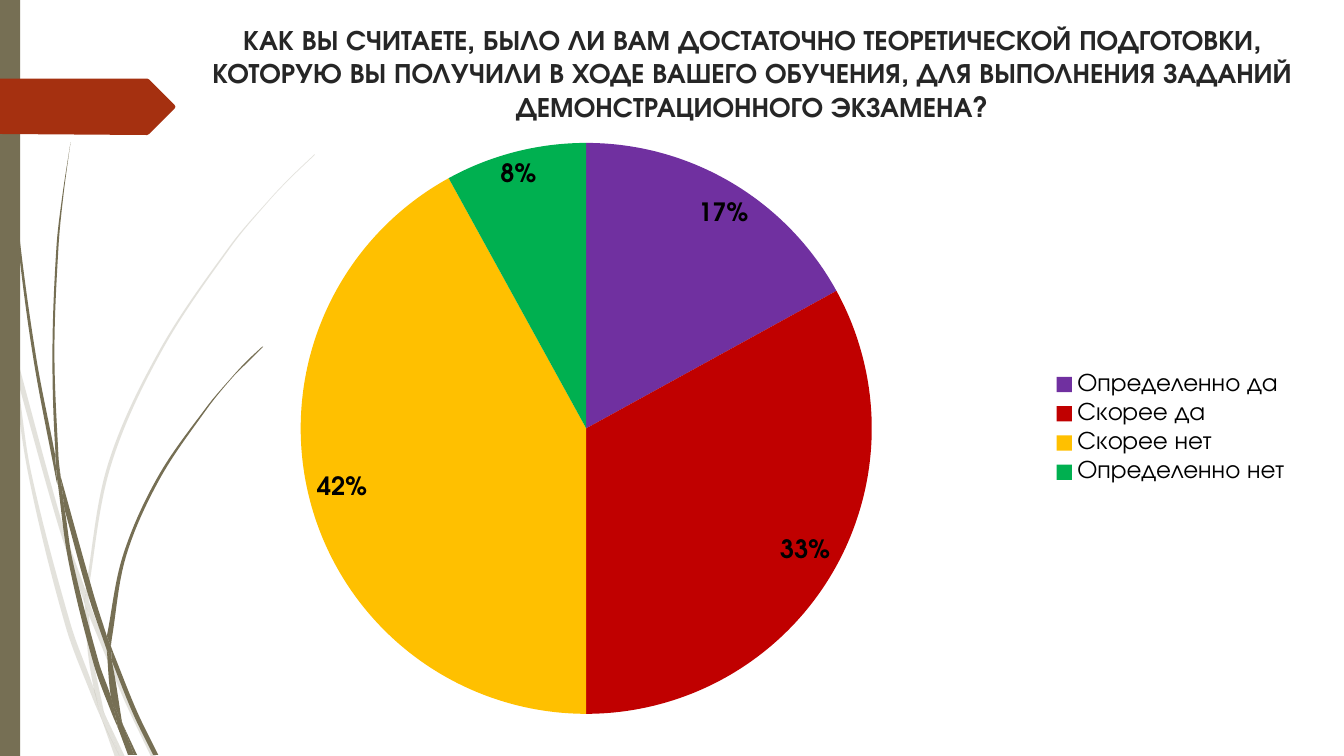
from math import dist

from lxml import etree
from pptx import Presentation
from pptx.chart.data import CategoryChartData
from pptx.dml.color import RGBColor
from pptx.enum.chart import XL_CHART_TYPE, XL_LABEL_POSITION, XL_LEGEND_POSITION
from pptx.enum.shapes import MSO_SHAPE
from pptx.enum.text import MSO_ANCHOR, MSO_AUTO_SIZE, PP_ALIGN
from pptx.oxml.ns import qn
from pptx.util import Inches, Pt

PIE = XL_CHART_TYPE.PIE
BEST_FIT = XL_LABEL_POSITION.BEST_FIT
LEGEND_RIGHT = XL_LEGEND_POSITION.RIGHT
RECTANGLE = MSO_SHAPE.RECTANGLE
TOP = MSO_ANCHOR.TOP
NO_AUTOFIT = MSO_AUTO_SIZE.NONE
CENTER = PP_ALIGN.CENTER

FONT = "TeX Gyre Adventor"
OLIVE, RUST, INK, BLACK = "766F54", "A53010", "262626", "000000"
TITLE = ("КАК ВЫ СЧИТАЕТЕ, БЫЛО ЛИ ВАМ ДОСТАТОЧНО ТЕОРЕТИЧЕСКОЙ ПОДГОТОВКИ, "
         "КОТОРУЮ ВЫ ПОЛУЧИЛИ В ХОДЕ ВАШЕГО ОБУЧЕНИЯ, ДЛЯ ВЫПОЛНЕНИЯ ЗАДАНИЙ "
         "ДЕМОНСТРАЦИОННОГО ЭКЗАМЕНА?")
ANSWERS = [("Определенно да", 17, "7030A0"), ("Скорее да", 33, "C00000"),
           ("Скорее нет", 42, "FFC000"), ("Определенно нет", 8, "00B050")]

# Each blade of grass is a pair of edges: out along the first, back along the second.
PALE_BLADES = [
    ([(0.11, 3.5), (0.09, 3.22), (0, 2.82)], [(0, 2.99), (0.1, 3.44), (0.11, 3.5)]),
    ([(0.17, 3.76), (0.58, 5.22), (0.84, 5.99)],
     [(0.85, 5.86), (0.62, 5.2), (0.14, 3.45)]),
    ([(0.88, 6.1), (1.23, 6.94), (1.5, 7.51)],
     [(1.55, 7.51), (1.27, 6.92), (0.92, 6.07), (0.88, 5.96)]),
    ([(1.05, 7.11), (1.19, 7.51)], [(1.24, 7.51), (1.05, 7.11)]),
    ([(0.11, 3.5), (0.28, 4.7), (0.65, 6.21), (0.92, 6.93), (1.01, 7.14)],
     [(0.99, 7.07), (0.93, 6.83), (0.7, 6.19), (0.31, 4.69), (0.17, 3.76), (0.11, 3.5)]),
    ([(0.84, 5.99), (0.87, 6.46), (0.93, 6.83), (0.96, 6.92), (1.05, 7.11)],
     [(1.03, 7.06), (0.91, 6.46), (0.88, 6.1), (0.84, 5.99)]),
    ([(0.88, 5.96), (0.88, 5.84), (1.1, 4.62), (1.6, 3.49), (2.29, 2.45),
      (2.68, 1.98), (2.9, 1.75), (3.12, 1.54)],
     [(3.12, 1.53), (2.89, 1.75), (2.68, 1.97), (2.28, 2.44), (1.58, 3.48),
      (1.07, 4.61), (0.85, 5.84), (0.85, 5.86)]),
    ([(1.01, 7.14), (1.14, 7.51)], [(1.19, 7.51), (1.01, 7.14)]),
    ([(0.88, 6.1), (0.88, 5.96)], [(0.85, 5.86), (0.84, 5.99), (0.88, 6.08)]),
    ([(0.93, 6.83), (0.99, 7.07), (1.01, 7.14), (1.19, 7.51)],
     [(1.05, 7.11), (0.96, 6.92), (0.93, 6.83)]),
]
DARK_BLADES = [
    ([(0.03, 0), (0.03, 0.48), (0.07, 1.1), (0.17, 2.33), (0.33, 3.55),
      (0.56, 4.77), (0.57, 4.81)],
     [(0.55, 4.57), (0.55, 4.53), (0.36, 3.55), (0.19, 2.32), (0.08, 1.09),
      (0.05, 0.48), (0.03, 0)]),
    ([(0.64, 5.05), (0.88, 5.92), (1.06, 6.45)],
     [(1.06, 6.31), (0.93, 5.9), (0.6, 4.72)]),
    ([(1.11, 6.56), (1.32, 7.08), (1.52, 7.49)],
     [(1.57, 7.49), (1.36, 7.06), (1.13, 6.49), (1.1, 6.41)]),
    ([(0.57, 4.77), (0.68, 5.57), (0.93, 6.59), (1.11, 7.08), (1.17, 7.22)],
     [(1.16, 7.17), (1.1, 6.91), (0.98, 6.57), (0.72, 5.56), (0.64, 5.05), (0.57, 4.77)]),
    ([(0.6, 4.72), (0.58, 4.53), (0.54, 3.49), (0.58, 2.45), (0.63, 1.93), (0.7, 1.41)],
     [(0.7, 1.41), (0.62, 1.93), (0.56, 2.45), (0.52, 3.49), (0.55, 4.49), (0.6, 4.72)]),
    ([(1.22, 7.19), (1.33, 7.49)], [(1.36, 7.49), (1.22, 7.19)]),
    ([(0.55, 4.53), (0.57, 4.77), (0.64, 5.05)], [(0.6, 4.72), (0.55, 4.49)]),
    ([(1.1, 6.41), (1.11, 6.33), (1.25, 5.52), (1.58, 4.76), (2.05, 4.06),
      (2.31, 3.74), (2.46, 3.59), (2.61, 3.44)],
     [(2.6, 3.44), (2.45, 3.58), (2.31, 3.73), (2.04, 4.05), (1.56, 4.74),
      (1.22, 5.51), (1.06, 6.31)]),
    ([(1.17, 7.22), (1.27, 7.49)], [(1.31, 7.49), (1.17, 7.22)]),
    ([(1.06, 6.45), (1.1, 6.91), (1.16, 7.06), (1.22, 7.19)],
     [(1.21, 7.16), (1.11, 6.56), (1.06, 6.45)]),
    ([(1.06, 6.45), (1.11, 6.56)], [(1.1, 6.41), (1.06, 6.31)]),
    ([(1.1, 6.91), (1.16, 7.17), (1.17, 7.22), (1.3, 7.49)],
     [(1.33, 7.49), (1.22, 7.19), (1.16, 7.06), (1.1, 6.91)]),
]
FLAG = [(-0.01, 0.78), (1.46, 0.78), (1.48, 0.79), (1.73, 1.04), (1.74, 1.06),
        (1.73, 1.08), (1.48, 1.33), (1.46, 1.34), (-0.01, 1.33)]


def color(value):
    return RGBColor.from_string(value)


def bend(lines):
    """Turn the line segments that follow the first point into one smooth curve."""
    points = [(int(line[0].get("x")), int(line[0].get("y"))) for line in lines]
    padded = [points[0], *points, points[-1]]
    for line, a, b, c, d in zip(lines[1:], padded, padded[1:], padded[2:], padded[3:]):
        reach = dist(b, c) / 3
        leave, arrive = reach / dist(a, c), reach / dist(b, d)
        first = [q + (r - p) * leave for p, q, r in zip(a, b, c)]
        second = [r - (s - q) * arrive for q, r, s in zip(b, c, d)]
        line.tag = qn("a:cubicBezTo")
        for index, (x, y) in enumerate((first, second)):
            line.insert(index, etree.Element(qn("a:pt"), x=str(round(x)), y=str(round(y))))


class SurveySlide:
    def __init__(self, presentation, font):
        self.slide = presentation.slides.add_slide(presentation.slide_layouts[5])
        self.shapes = self.slide.shapes
        self.font = font

    def paint(self, shape, fill, opacity=100):
        shape.shadow.inherit = False
        shape.fill.solid()
        shape.fill.fore_color.rgb = color(fill)
        shape.line.fill.background()
        if opacity < 100:
            tint = shape.element.spPr.find(".//" + qn("a:srgbClr"))
            etree.SubElement(tint, qn("a:alpha"), val=str(opacity * 1000))

    def outline(self, shapes, points, fill, opacity=100):
        corners = [(Inches(x), Inches(y)) for x, y in points]
        builder = shapes.build_freeform(*corners[0])
        builder.add_line_segments(corners[1:])
        shape = builder.convert_to_shape()
        self.paint(shape, fill, opacity)
        return shape

    def grass(self, blades, fill, opacity=100):
        group = self.shapes.add_group_shape()
        for out, back in blades:
            blade = self.outline(group.shapes, out + back, fill, opacity)
            lines = list(blade.element.spPr.find(".//" + qn("a:path")))[:len(out + back)]
            bend(lines[:len(out)])
            bend(lines[len(out):])

    def bar(self, left, top, width, height, fill):
        box = [Inches(n) for n in (left, top, width, height)]
        self.paint(self.shapes.add_shape(RECTANGLE, *box), fill)

    def title(self, text, left, top, width, height):
        title = self.shapes.title
        title.left, title.top = Inches(left), Inches(top)
        title.width, title.height = Inches(width), Inches(height)
        frame = title.text_frame
        frame.text = text
        frame.word_wrap = True
        frame.auto_size = NO_AUTOFIT
        frame.vertical_anchor = TOP
        paragraph = frame.paragraphs[0]
        paragraph.alignment = CENTER
        self.style(paragraph.font, 20, INK, True)

    def style(self, font, size, fill, bold=False):
        font.name, font.size, font.bold = self.font, Pt(size), bold
        font.color.rgb = color(fill)

    def pie(self, answers, left, top, width, height):
        names, values, fills = zip(*answers)
        data = CategoryChartData()
        data.categories = names
        data.add_series("Series 1", values)
        box = [Inches(n) for n in (left, top, width, height)]
        chart = self.shapes.add_chart(PIE, *box, data).chart
        self.style(chart.font, 18, BLACK)
        chart.has_title = False
        chart.has_legend = True
        chart.legend.position = LEGEND_RIGHT
        chart.legend.include_in_layout = False
        plot = chart.plots[0]
        plot.vary_by_categories = True
        for index, fill in enumerate(fills):
            slice_fill = plot.series[0].points[index].format.fill
            slice_fill.solid()
            slice_fill.fore_color.rgb = color(fill)
        plot.has_data_labels = True
        labels = plot.data_labels
        labels.show_percentage, labels.show_value = True, False
        labels.number_format, labels.number_format_is_linked = "0%", False
        labels.position = BEST_FIT
        self.style(labels.font, 18, BLACK, True)


def main():
    presentation = Presentation()
    presentation.slide_width, presentation.slide_height = Inches(13.33), Inches(7.5)
    survey = SurveySlide(presentation, FONT)
    survey.grass(PALE_BLADES, OLIVE, 20)
    survey.grass(DARK_BLADES, OLIVE)
    survey.bar(0, 0, 0.2, 7.5, OLIVE)
    survey.outline(survey.shapes, FLAG, RUST)
    survey.title(TITLE, 1.77, 0.17, 11.38, 1.12)
    survey.pie(ANSWERS, 1.23, 1.28, 11.67, 5.94)
    presentation.save("out.pptx")


if __name__ == "__main__":
    main()
